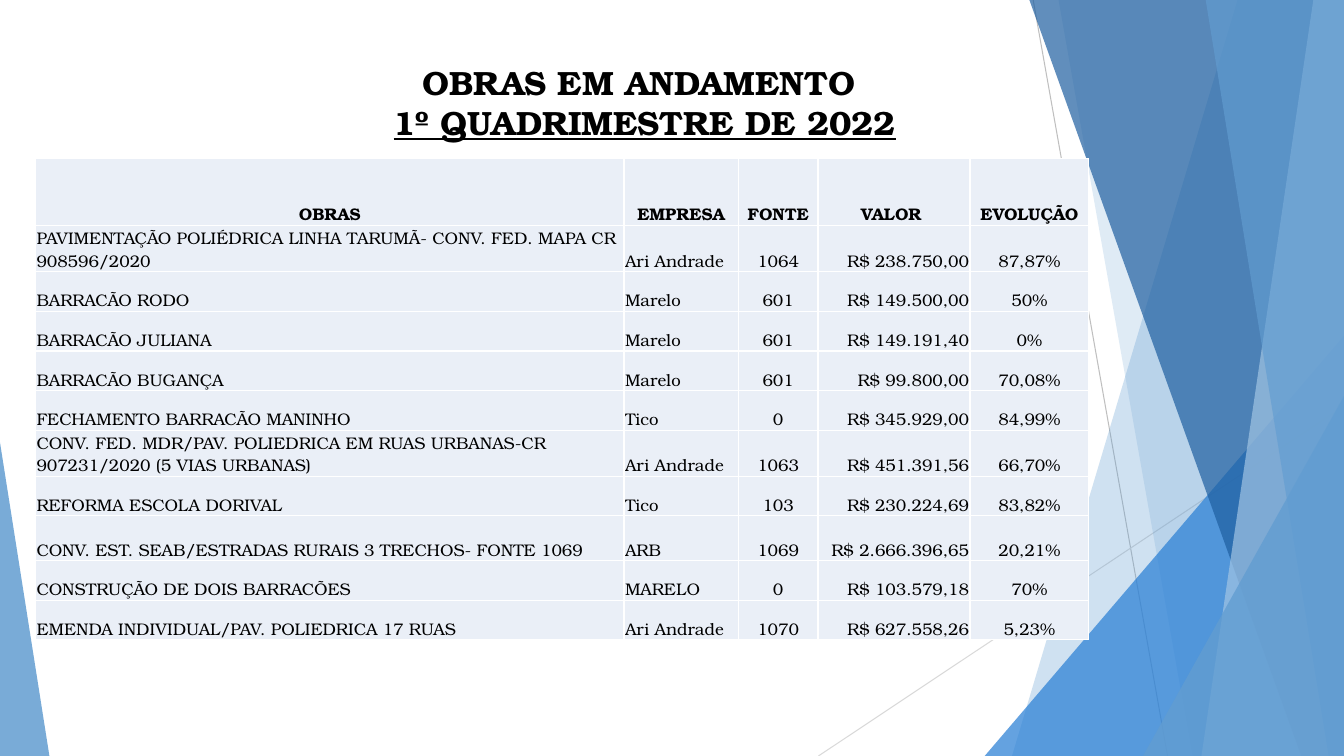
from lxml import etree
from pptx import Presentation
from pptx.dml.color import RGBColor as RGB
from pptx.enum.shapes import MSO_CONNECTOR as LINK, MSO_SHAPE as SHAPE
from pptx.enum.text import MSO_ANCHOR as ANCHOR, MSO_AUTO_SIZE as FIT, PP_ALIGN as ALIGN
from pptx.oxml import parse_xml
from pptx.oxml.ns import nsdecls, qn
from pptx.util import Pt

FONT = "TeX Gyre Bonum"
HEX = {"sky": "629DD1", "blue": "297FD5", "navy": "1F5FA0", "pale": "A1C4E3",
       "grey": "BFBFBF", "mist": "D9D9D9", "cell": "EAEFF7",
       "white": "FFFFFF", "black": "000000"}
WIDE, HIGH = 960, 540


def tint(shape, name, alpha):
    """Fill a shape with a see-through colour, without outline or shadow."""
    shape.shadow.inherit = False
    shape.line.fill.background()
    shape.fill.solid()
    shape.fill.fore_color.rgb = RGB.from_string(HEX[name])
    color = shape.fill._xPr.find(".//" + qn("a:srgbClr"))
    etree.SubElement(color, qn("a:alpha"), val=str(alpha * 1000))


def write(para, text, size, bold, under=False):
    run = para.add_run()
    run.text = text
    font = run.font
    font.name, font.size, font.bold = FONT, Pt(size), bold
    font.underline = under
    font.color.rgb = RGB.from_string(HEX["black"])


deck = Presentation()
deck.slide_width, deck.slide_height = Pt(WIDE), Pt(HIGH)
slide = deck.slides.add_slide(deck.slide_layouts[5])
shapes = slide.shapes

# Thin lines behind the bands
for x1, y1, x2, y2, name in [(738, 0, 834, HIGH, "grey"),
                             (WIDE, 290, 584.6, HIGH, "mist")]:
    line = shapes.add_connector(LINK.STRAIGHT, Pt(x1), Pt(y1), Pt(x2), Pt(y2))
    line.line.width = Pt(0.75)
    line.line.color.rgb = RGB.from_string(HEX[name])
    etree.SubElement(line._element.spPr, qn("a:effectLst"))

# Bands: left edge at top, left edge at bottom
# Peaks: left, top, width, apex position
decor = [
    ("band", (884.2, 722.9), "sky", 30),
    ("band", (756, 851.8), "sky", 20),
    ("peak", (703.4, 239.8, 256.6, 1), "blue", 72),
    ("band", (735.1, 929.5), "navy", 70),
    ("band", (938.2, 858.2), "pale", 70),
    ("band", (861.1, 949), "sky", 65),
    ("peak", (816.5, 283, 143.5, 1), "sky", 80),
    ("peak", (0, 316.1, 35.3, 0), "sky", 85),
]
for kind, place, name, alpha in decor:
    if kind == "band":
        top, base = place
        pen = shapes.build_freeform(Pt(top), Pt(-0.6), scale=1.0)
        pen.add_line_segments([(Pt(WIDE), Pt(-0.6)), (Pt(WIDE), Pt(HIGH)),
                               (Pt(base), Pt(HIGH))], close=True)
        shape = pen.convert_to_shape()
    else:
        x, y, w, apex = place
        shape = shapes.add_shape(SHAPE.ISOSCELES_TRIANGLE,
                                 Pt(x), Pt(y), Pt(w), Pt(HIGH - y))
        shape.adjustments[0] = apex
    tint(shape, name, alpha)

# Title, brought in front of the bands
title = shapes.title
title.left, title.top, title.width, title.height = Pt(126), Pt(40.3), Pt(669), Pt(77)
title.element.getparent().append(title.element)
frame = title.text_frame
frame.word_wrap, frame.auto_size = True, FIT.NONE
frame.vertical_anchor = ANCHOR.TOP
para = frame.paragraphs[0]
para.alignment = ALIGN.CENTER
write(para, "OBRAS EM ANDAMENTO ", 24, True)
para.add_line_break()
write(para, "1º QUADRIMESTRE DE 2022", 24, True, True)

# Table of works
rows = [
    ("OBRAS", "EMPRESA", "FONTE", "VALOR ", " EVOLUÇÃO "),
    ("PAVIMENTAÇÃO POLIÉDRICA LINHA TARUMÃ- CONV. FED. MAPA CR 908596/2020",
     "Ari Andrade", "1064", "R$ 238.750,00", "87,87%"),
    ("BARRACÃO RODO", "Marelo", "601", "R$ 149.500,00", "50%"),
    ("BARRACÃO JULIANA", "Marelo", "601", "R$ 149.191,40", "0%"),
    ("BARRACÃO BUGANÇA", "Marelo", "601", "R$ 99.800,00", "70,08%"),
    ("FECHAMENTO BARRACÃO MANINHO", "Tico", "0", "R$ 345.929,00", "84,99%"),
    ("CONV. FED. MDR/PAV. POLIEDRICA EM RUAS URBANAS-CR 907231/2020 (5 VIAS URBANAS)",
     "Ari Andrade", "1063", "R$ 451.391,56", "66,70%"),
    ("REFORMA ESCOLA DORIVAL", "Tico", "103", "R$ 230.224,69", "83,82%"),
    ("CONV. EST. SEAB/ESTRADAS RURAIS 3 TRECHOS- FONTE 1069",
     "ARB", "1069", "R$ 2.666.396,65", "20,21%"),
    ("CONSTRUÇÃO DE DOIS BARRACÕES", "MARELO", "0", "R$ 103.579,18", "70%"),
    ("EMENDA INDIVIDUAL/PAV. POLIEDRICA 17 RUAS",
     "Ari Andrade", "1070", "R$ 627.558,26", "5,23%"),
]
widths = [420.4, 81.6, 57, 108.6, 84.8]
heights = {0: 47.8, 1: 32, 6: 32, 8: 32}
aligns = [ALIGN.LEFT, ALIGN.LEFT, ALIGN.CENTER, ALIGN.RIGHT, ALIGN.CENTER]

table = shapes.add_table(len(rows), len(widths), Pt(25.4), Pt(113.5),
                         Pt(sum(widths)), Pt(341)).table
table.horz_banding = False
for col, width in zip(table.columns, widths):
    col.width = Pt(width)
for r, row in enumerate(rows):
    table.rows[r].height = Pt(heights.get(r, 28.3))
    for c, text in enumerate(row):
        cell = table.cell(r, c)
        cell.vertical_anchor = ANCHOR.BOTTOM
        cell.margin_left = cell.margin_right = cell.margin_top = Pt(0.7)
        cell.margin_bottom = 0
        para = cell.text_frame.paragraphs[0]
        para.alignment = aligns[c] if r else ALIGN.CENTER
        write(para, text, 12, r == 0)
        for side in "LRTB":
            cell._tc.get_or_add_tcPr().append(parse_xml(
                f'<a:ln{side} {nsdecls("a")} w="12700"><a:solidFill>'
                f'<a:srgbClr val="{HEX["white"]}"/></a:solidFill></a:ln{side}>'))
        cell.fill.solid()
        cell.fill.fore_color.rgb = RGB.from_string(HEX["cell"])

deck.save("out.pptx")
